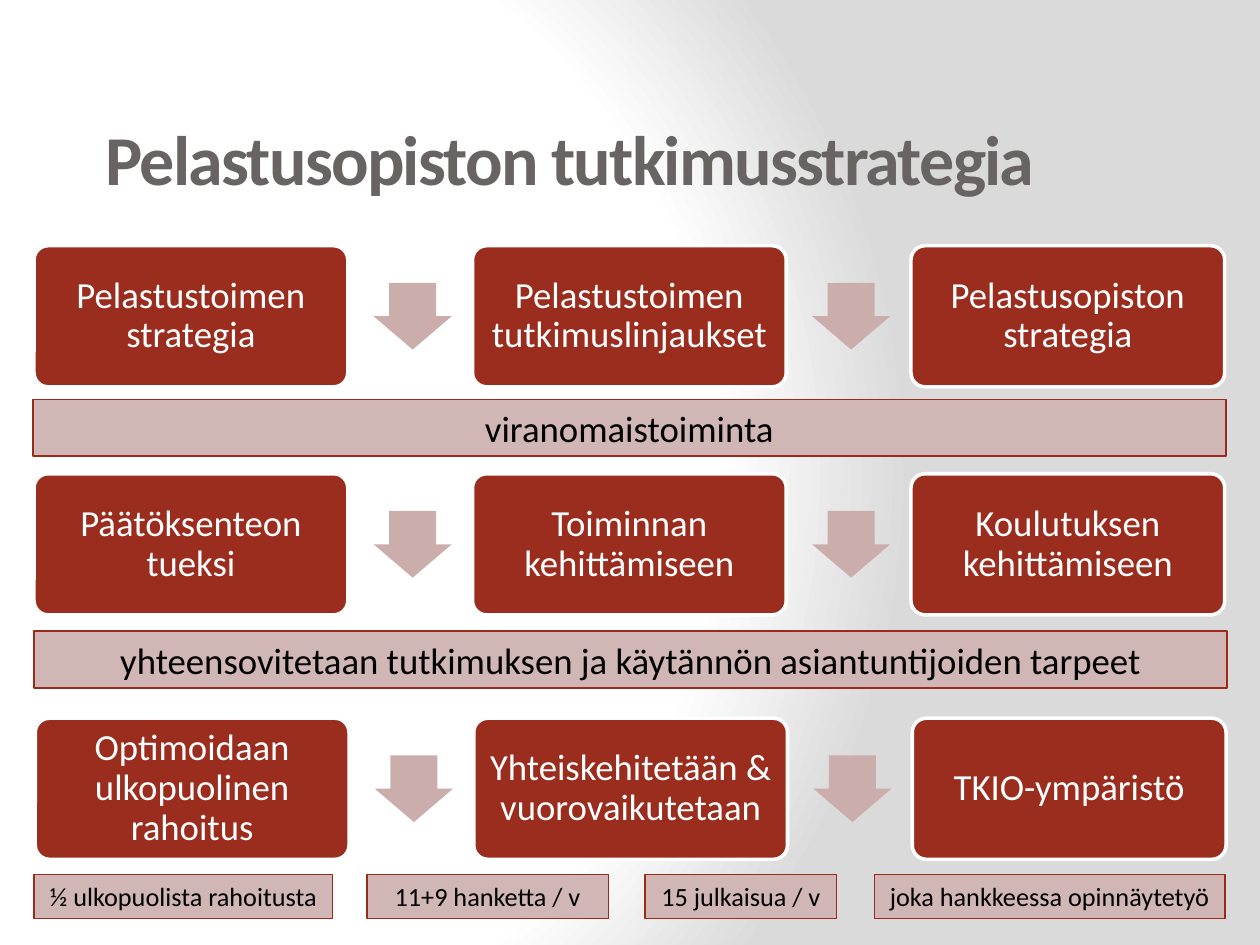
from pptx import Presentation
from pptx.dml.color import RGBColor as RGB
from pptx.enum.shapes import MSO_SHAPE as Shape
from pptx.enum.text import MSO_ANCHOR as Anchor, MSO_AUTO_SIZE as AutoSize, PP_ALIGN as Align
from pptx.oxml import parse_xml
from pptx.oxml.ns import nsdecls
from pptx.util import Inches, Pt

COLORS = {
    "card": "9B2D1F",
    "card_line": "FFFFFF",
    "card_text": "FFFFFF",
    "arrow": "CBADAC",
    "banner": "D0B6B5",
    "banner_line": "9B2A1B",
    "banner_text": "000000",
    "title": "696464",
    "page": "FFFFFF",
    "page_edge": "DADADA",
}

CARD_WIDTH, CARD_HEIGHT, CARD_STEP = 2.49, 1.12, 3.48
ARROW_OFFSET_X, ARROW_OFFSET_Y = 2.74, 0.25

CARD_ROWS = [
    (0.27, 1.95, ["Pelastustoimen strategia", "Pelastustoimen tutkimuslinjaukset",
                  "Pelastusopiston strategia"]),
    (0.27, 3.76, ["Päätöksenteon tueksi", "Toiminnan kehittämiseen",
                  "Koulutuksen kehittämiseen"]),
    (0.28, 5.7, ["Optimoidaan ulkopuolinen rahoitus", "Yhteiskehitetään & vuorovaikutetaan",
                 "TKIO-ympäristö"]),
]
BANNERS = [
    (0.26, 3.17, "viranomaistoiminta"),
    (0.27, 5.01, "yhteensovitetaan tutkimuksen ja käytännön asiantuntijoiden tarpeet"),
]
RESULTS = [
    (0.27, 2.37, "½ ulkopuolista rahoitusta"),
    (2.91, 1.92, "11+9 hanketta / v"),
    (5.12, 1.52, "15 julkaisua / v"),
    (6.94, 2.78, "joka hankkeessa opinnäytetyö"),
]


class StrategySlide:
    font_name = "Calibri"

    def __init__(self, page):
        self.page = page

    def background(self):
        """Radial gradient centred on the left, darkening towards the right edge."""
        stops = [(0, "page"), (75, "page"), (100, "page_edge")]
        stop_xml = "".join(
            f'<a:gs pos="{percent * 1000}"><a:srgbClr val="{COLORS[name]}"/></a:gs>'
            for percent, name in stops)
        self.page._element.cSld.insert(0, parse_xml(
            f'<p:bg {nsdecls("p", "a")}><p:bgPr><a:gradFill rotWithShape="1">'
            f'<a:gsLst>{stop_xml}</a:gsLst><a:path path="circle">'
            '<a:fillToRect l="20000" t="50000" r="100000" b="50000"/></a:path>'
            '</a:gradFill><a:effectLst/></p:bgPr></p:bg>'))

    def label(self, box, text, size, color, frame_format, line_spacing=None, bold=False):
        frame = box.text_frame
        for name, value in {"word_wrap": True, **frame_format}.items():
            setattr(frame, name, value)
        para = frame.paragraphs[0]
        para.alignment = Align.CENTER
        para.line_spacing = line_spacing
        span = para.add_run()
        span.text = text
        font_format = {"name": self.font_name, "size": Pt(size), "bold": bold}
        for name, value in font_format.items():
            setattr(span.font, name, value)
        span.font.color.rgb = RGB.from_string(COLORS[color])
        return span

    def shape(self, shapes, kind, bounds, fill, line=None, line_width=1):
        box = shapes.add_shape(kind, *map(Inches, bounds))
        box.shadow.inherit = False
        box.fill.solid()
        box.fill.fore_color.rgb = RGB.from_string(COLORS[fill])
        if line:
            box.line.color.rgb = RGB.from_string(COLORS[line])
            box.line.width = Pt(line_width)
        else:
            box.line.fill.background()
        return box

    def card(self, shapes, left, top, text):
        box = self.shape(shapes, Shape.ROUNDED_RECTANGLE,
                         (left, top, CARD_WIDTH, CARD_HEIGHT), "card", "card_line", 2)
        box.adjustments[0] = 0.1
        sides = ("left", "top", "right", "bottom")
        frame_format = {f"margin_{side}": Inches(0.09) for side in sides}
        frame_format["vertical_anchor"] = Anchor.MIDDLE
        self.label(box, text, 21, "card_text", frame_format, line_spacing=0.9)

    def arrow(self, shapes, left, top):
        arrow = self.shape(shapes, Shape.RIGHT_ARROW, (left, top, 0.53, 0.62), "arrow")
        arrow.rotation = 90
        arrow.adjustments[0], arrow.adjustments[1] = 0.6, 0.5

    def card_row(self, left, top, texts):
        shapes = self.page.shapes.add_group_shape().shapes
        for column, text in enumerate(texts):
            card_left = left + column * CARD_STEP
            if column:
                self.arrow(shapes, card_left - CARD_STEP + ARROW_OFFSET_X, top + ARROW_OFFSET_Y)
            self.card(shapes, card_left, top, text)

    def banner(self, bounds, text, size):
        box = self.shape(self.page.shapes, Shape.RECTANGLE, bounds, "banner", "banner_line")
        frame_format = {"vertical_anchor": Anchor.TOP, "auto_size": AutoSize.SHAPE_TO_FIT_TEXT}
        self.label(box, text, size, "banner_text", frame_format)

    def title(self, bounds, text):
        box = self.page.shapes.add_textbox(*map(Inches, bounds))
        span = self.label(box, text, 40, "title", {"vertical_anchor": Anchor.BOTTOM}, bold=True)
        span.font._element.set("spc", "-100")


def main():
    deck = Presentation()
    deck.slide_width, deck.slide_height = Inches(10), Inches(7.5)
    slide = StrategySlide(deck.slides.add_slide(deck.slide_layouts[6]))

    slide.background()
    for row in CARD_ROWS:
        slide.card_row(*row)
    for left, top, text in BANNERS:
        slide.banner((left, top, 9.47, 0.45), text, 21)
    for left, width, text in RESULTS:
        slide.banner((left, 6.94, width, 0.35), text, 15)
    slide.title((0.59, 0.76, 7.87, 0.87), "Pelastusopiston tutkimusstrategia")

    deck.save("out.pptx")


if __name__ == "__main__":
    main()
